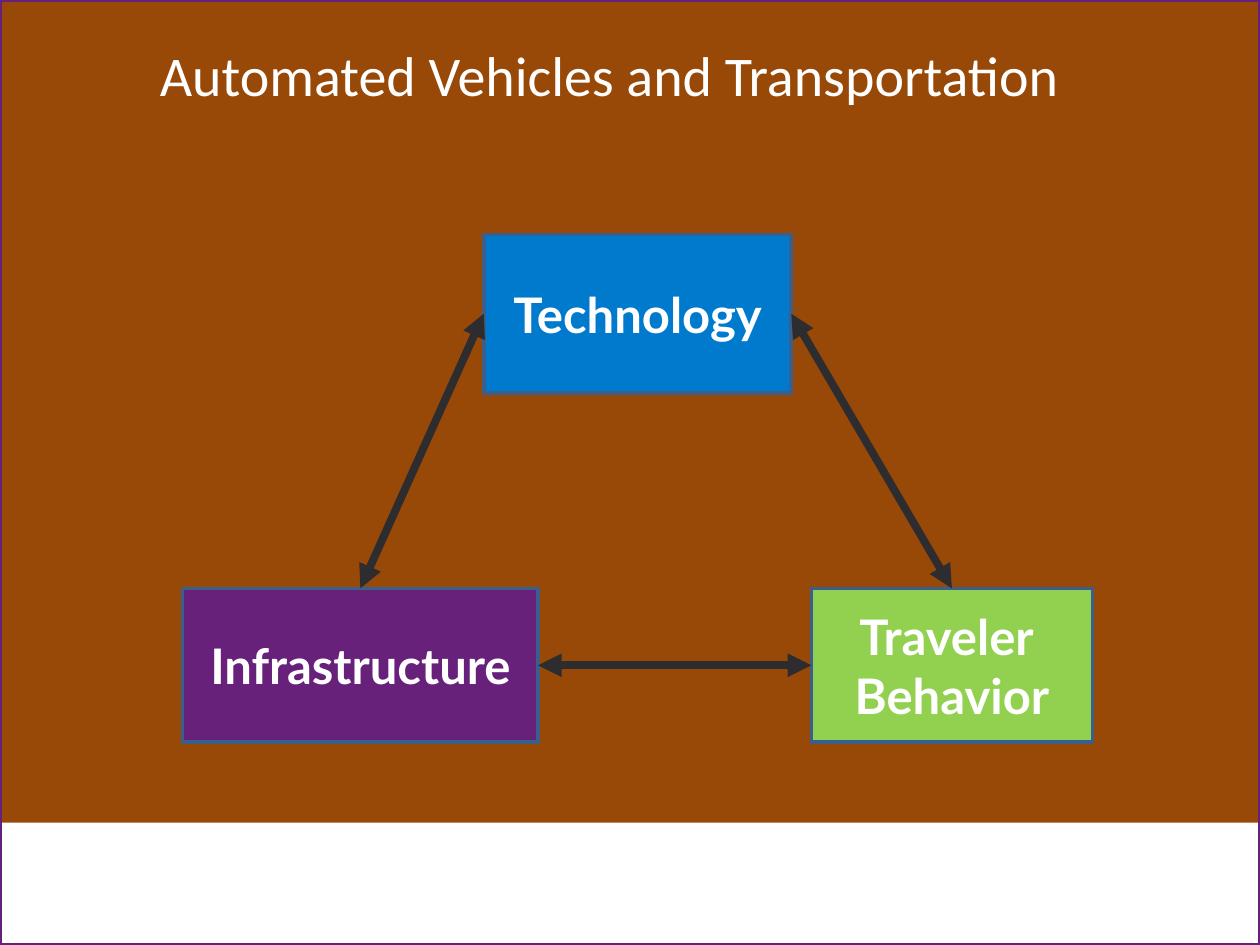
from dataclasses import dataclass

from lxml import etree
from pptx import Presentation
from pptx import util as u
from pptx.dml.color import RGBColor
from pptx.enum import shapes, text
from pptx.oxml.ns import qn

COLS, ROWS = 100, 75
TOP, LEFT, RIGHT = 0, 1, 3  # connection sites of a rectangle


@dataclass(frozen=True)
class Theme:
    back: str = "984807"
    white: str = "FFFFFF"
    purple: str = "68217A"
    blue: str = "007ACC"
    green: str = "92D050"
    edge: str = "3A5F8C"
    arrow: str = "2D2D30"
    head_font: str = "Calibri"
    body_font: str = "Lato"
    head_size: int = 32
    body_size: int = 28
    edge_width: float = 2
    arrow_width: float = 4.5


def rgb(code):
    return RGBColor.from_string(code)


class Board:
    def __init__(self, theme):
        self.theme = theme
        self.deck = Presentation()
        self.deck.slide_width, self.deck.slide_height = u.Inches(10), u.Inches(7.5)
        self.slide = self.deck.slides.add_slide(self.deck.slide_layouts[6])
        fill = self.slide.background.fill
        fill.solid()
        fill.fore_color.rgb = rgb(theme.back)

    def place(self, col, row, wide, high):
        """Turn grid columns and rows into slide lengths."""
        dx, dy = self.deck.slide_width / COLS, self.deck.slide_height / ROWS
        return [round(n) for n in (col * dx, row * dy, wide * dx, high * dy)]

    def add_run(self, para, words, font, size, bold=False):
        run = para.add_run()
        run.text = words
        run.font.name, run.font.size, run.font.bold = font, u.Pt(size), bold
        run.font.color.rgb = rgb(self.theme.white)

    def rect(self, area, fill=None, edge=None):
        box = self.slide.shapes.add_shape(
            shapes.MSO_SHAPE.RECTANGLE, *self.place(*area))
        box.shadow.inherit = False
        if fill:
            box.fill.solid()
            box.fill.fore_color.rgb = rgb(fill)
        else:
            box.fill.background()
        if edge:
            box.line.color.rgb = rgb(edge)
            box.line.width = u.Pt(self.theme.edge_width)
        else:
            box.line.fill.background()
        return box

    def title(self, area, words):
        frame = self.slide.shapes.add_textbox(*self.place(*area)).text_frame
        frame.word_wrap = False
        frame.auto_size = text.MSO_AUTO_SIZE.SHAPE_TO_FIT_TEXT
        para = frame.paragraphs[0]
        para.line_spacing = 0.75
        self.add_run(para, words, self.theme.head_font, self.theme.head_size)

    def topic(self, area, fill, *lines):
        box = self.rect(area, fill, self.theme.edge)
        frame = box.text_frame
        frame.vertical_anchor = text.MSO_ANCHOR.MIDDLE
        for i, words in enumerate(lines):
            para = frame.add_paragraph() if i else frame.paragraphs[0]
            para.alignment = text.PP_ALIGN.CENTER
            self.add_run(para, words, self.theme.body_font,
                         self.theme.body_size, True)
        return box

    def link(self, start, out, end, into):
        """Join two boxes, at the given sites, by a two-headed arrow."""
        line = self.slide.shapes.add_connector(
            shapes.MSO_CONNECTOR.STRAIGHT, 0, 0, 0, 0)
        line.begin_connect(start, out)
        line.end_connect(end, into)
        line.line.color.rgb = rgb(self.theme.arrow)
        line.line.width = u.Pt(self.theme.arrow_width)
        props = line._element.spPr
        for tip in ("a:headEnd", "a:tailEnd"):
            etree.SubElement(props.find(qn("a:ln")), qn(tip), type="triangle")
        etree.SubElement(props, qn("a:effectLst"))


def main():
    theme = Theme()
    board = Board(theme)
    board.rect((0, 65.3, COLS, ROWS - 65.3), fill=theme.white)
    board.rect((0, 0, COLS, ROWS), edge=theme.purple)
    board.title((11.7, 4, 74.2, 5.2), "Automated Vehicles and Transportation")

    base, high = 46.7, 12.2
    tech = board.topic((38.4, 18.6, 24.4, 12.6), theme.blue, "Technology")
    infra = board.topic((14.5, base, 28.2, high), theme.purple, "Infrastructure")
    travel = board.topic((64.4, base, 22.3, high), theme.green,
                         "Traveler ", "Behavior")

    board.link(infra, TOP, tech, LEFT)
    board.link(travel, TOP, tech, RIGHT)
    board.link(travel, LEFT, infra, RIGHT)
    board.deck.save("out.pptx")


if __name__ == "__main__":
    main()
